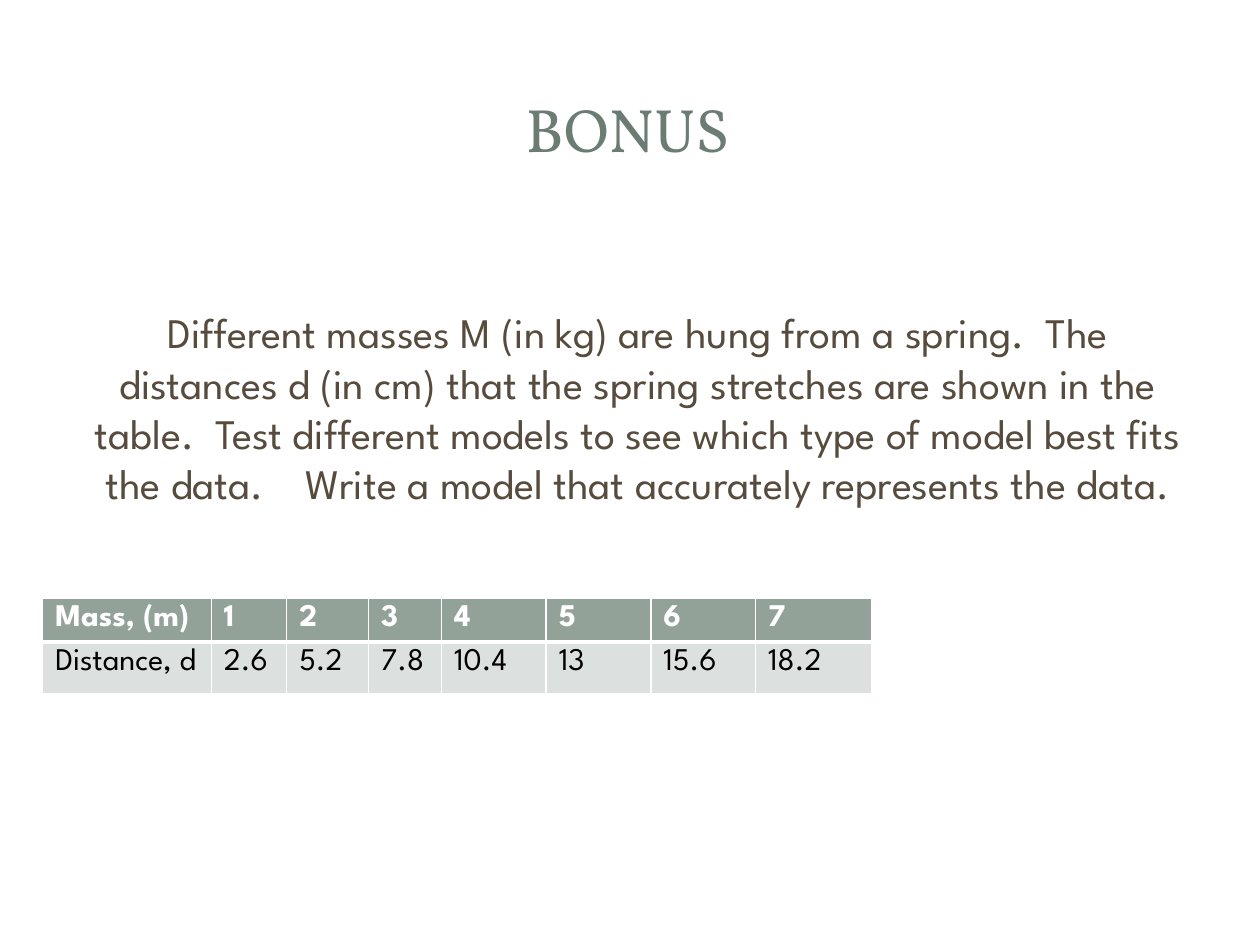
from lxml import etree
from pptx import Presentation
from pptx.dml.color import RGBColor
from pptx.enum import shapes, text
from pptx.oxml.ns import qn
from pptx.util import Cm, Pt

SAGE_DARK = RGBColor(0x6B, 0x7D, 0x72)
SAGE = RGBColor(0x93, 0xA2, 0x99)
SAGE_PALE = RGBColor(0xDC, 0xE0, 0xDE)
BROWN = RGBColor(0x56, 0x4B, 0x3C)
WHITE = RGBColor(0xFF, 0xFF, 0xFF)
BLACK = RGBColor(0, 0, 0)


def add_run(paragraph, words, font, size, color, bold=False):
    run = paragraph.add_run()
    run.text = words
    run.font.name = font
    run.font.size = Pt(size)
    run.font.color.rgb = color
    run.font.bold = bold


def add_border(cell, side, points):
    # Borders come before the fill in the cell properties
    line = etree.SubElement(cell._tc.get_or_add_tcPr(), qn(f"a:{side}"), w=str(Pt(points)))
    fill = etree.SubElement(line, qn("a:solidFill"))
    etree.SubElement(fill, qn("a:srgbClr"), val=str(WHITE))


prs = Presentation()
prs.slide_width, prs.slide_height = Cm(25.4), Cm(19.05)
slide = prs.slides.add_slide(prs.slide_layouts[5])

# White page panel and title frame: kind, left, top, width, height, opacity
RECT = shapes.MSO_SHAPE.RECTANGLE
for kind, left, top, width, height, opacity in [
    (shapes.MSO_SHAPE.ROUNDED_RECTANGLE, 0.25, 0.28, 24.89, 18.49, 100),
    (RECT, 0.76, 0.76, 23.88, 3.68, 83),
    (RECT, 1.04, 1.04, 23.29, 3.1, 100),
]:
    panel = slide.shapes.add_shape(kind, Cm(left), Cm(top), Cm(width), Cm(height))
    panel.shadow.inherit = False
    panel.line.fill.background()
    panel.fill.solid()
    panel.fill.fore_color.rgb = WHITE
    if kind != RECT:
        panel.adjustments[0] = 0.017
    if opacity < 100:
        color = panel.fill._xPr.find(".//" + qn("a:srgbClr"))
        etree.SubElement(color, qn("a:alpha"), val=str(opacity * 1000))

# Title, brought in front of the panels
title = slide.shapes.title
slide.shapes._spTree.append(title._element)
title.left, title.top, title.width, title.height = Cm(1.18), Cm(1.14), Cm(22.94), Cm(2.9)
title.text_frame.vertical_anchor = text.MSO_ANCHOR.MIDDLE
heading = title.text_frame.paragraphs[0]
heading.alignment = text.PP_ALIGN.CENTER
add_run(heading, "BONUS", "Vollkorn", 35, SAGE_DARK)

# Problem statement
problem = slide.shapes.add_textbox(Cm(1.27), Cm(6.06), Cm(22.86), Cm(10.92)).text_frame
problem.word_wrap = True
problem.margin_left = Cm(0.56)
question = problem.paragraphs[0]
question.alignment = text.PP_ALIGN.CENTER
question.line_spacing = Pt(28.8)
add_run(question,
        "Different masses M (in kg) are hung from a spring.  The distances d (in cm) "
        "that the spring stretches are shown in the table.  Test different models to "
        "see which type of model best fits the data.    Write a model that accurately "
        "represents the data.",
        "League Spartan", 24, BROWN)

# Measurements: values, fill, text colour, bold, row height, bottom border
measurements = [
    (["Mass, (m)", "1", "2", "3", "4", "5", "6", "7"], SAGE, WHITE, True, 0.83, 3),
    (["Distance, d", "2.6", "5.2", "7.8", "10.4", "13", "15.6", "18.2"],
     SAGE_PALE, BLACK, False, 1.04, 1),
]
widths = [3.4, 1.52, 1.65, 1.47, 2.11, 2.11, 2.11, 2.34]
table = slide.shapes.add_table(len(measurements), len(widths), Cm(0.86), Cm(12.07),
                               Cm(sum(widths)), Cm(1.87)).table
for column, width in zip(table.columns, widths):
    column.width = Cm(width)
for r, (values, fill, color, bold, height, bottom) in enumerate(measurements):
    table.rows[r].height = Cm(height)
    for c, value in enumerate(values):
        cell = table.cell(r, c)
        top = measurements[r - 1][-1] if r else 1
        for side, points in (("lnL", 1), ("lnR", 1), ("lnT", top), ("lnB", bottom)):
            add_border(cell, side, points)
        cell.fill.solid()
        cell.fill.fore_color.rgb = fill
        cell.margin_bottom = 0
        if r == 0:
            cell.margin_top = Cm(0.11)
        add_run(cell.text_frame.paragraphs[0], value, "League Spartan", 18, color, bold)

prs.save("out.pptx")
